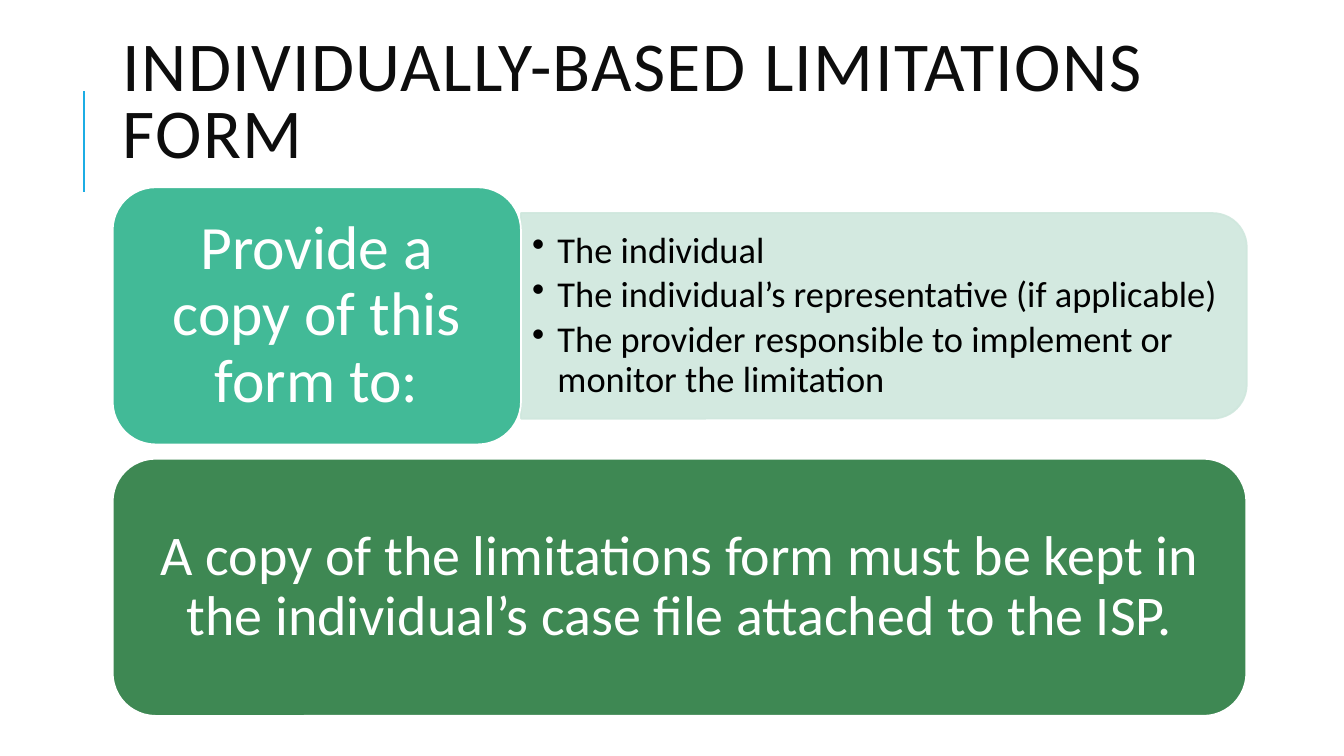
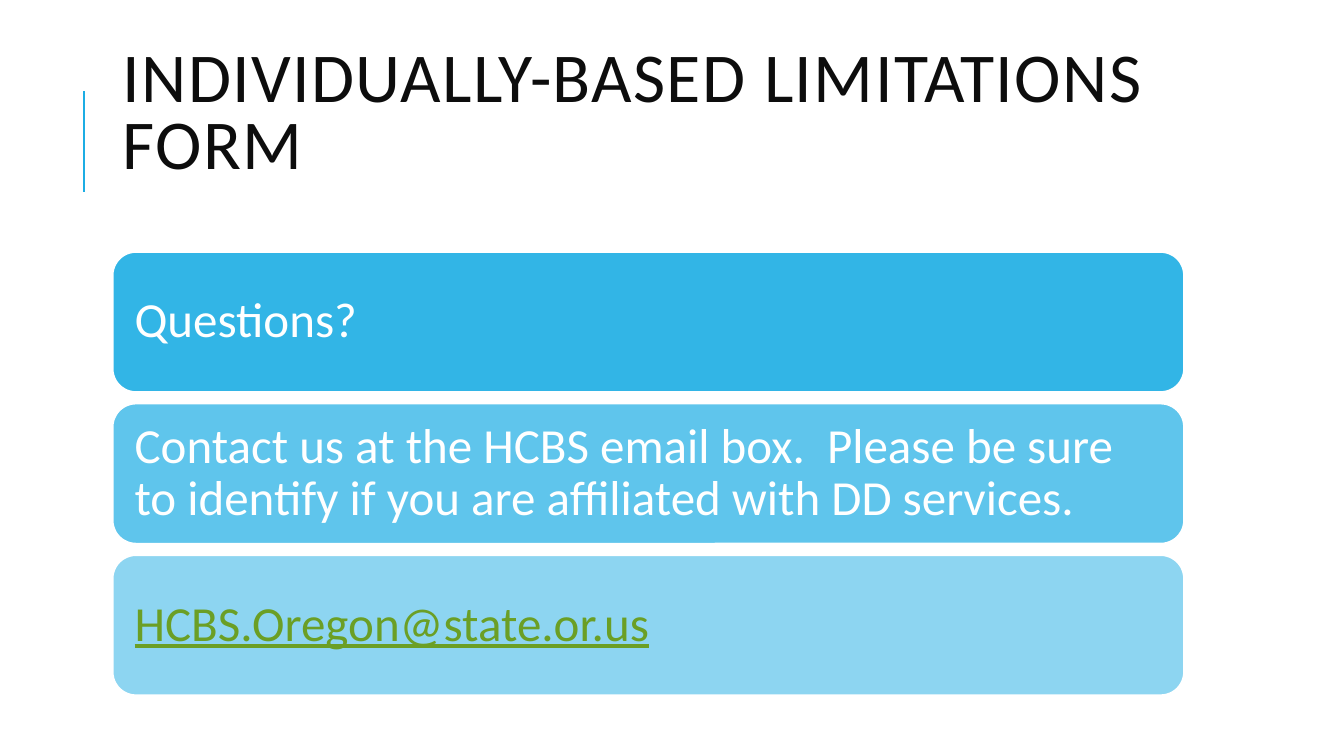
from lxml.etree import SubElement
from pptx import Presentation
from pptx.dml.color import RGBColor
from pptx.enum.shapes import MSO_CONNECTOR, MSO_SHAPE
from pptx.enum.text import MSO_ANCHOR, PP_ALIGN
from pptx.oxml.ns import qn
from pptx.util import Cm, Pt

COLORS = {
    "ink": "0D0D0D", "black": "000000", "white": "FFFFFF", "blue": "1CADE4",
    "teal": "42BA97", "mint": "CFE7DD", "green": "3E8853", "link": "6B9F25",
}
FONT = "Calibri"
TITLE = "INDIVIDUALLY-BASED LIMITATIONS FORM"

PROVIDE = "Provide a copy of this form to:"
RECIPIENTS = [
    "The individual",
    "The individual’s representative (if applicable)",
    "The provider responsible to implement or monitor the limitation",
]
KEEP = "A copy of the limitations form must be kept in the individual’s case file attached to the ISP."

# text, fill opacity in percent, text format
CONTACT = [
    ("Questions?", 90, {}),
    ("Contact us at the HCBS email box.  Please be sure to identify if you are "
     "affiliated with DD services.", 70, {}),
    ("HCBS.Oregon@state.or.us", 50, {"color": "link", "underline": True}),
]

# lengths in centimetres
LEFT, TITLE_WIDTH, TITLE_HEIGHT = 2.84, 27, 4.17
RULE_X, RULE_TOP, RULE_BOTTOM = 2.11, 2.29, 4.83
ROW_TOP, ROW_HEIGHT, ROW_GAP = 4.72, 6.48, 0.36
LABEL_WIDTH, KEEP_WIDTH = 10.29, 28.57
PANEL_WIDTH, PANEL_HEIGHT = 18.29, 5.18
LIST_WIDTH, LIST_HEIGHT = 18.03, 4.67
CARD_TOP, CARD_HEIGHT, CARD_GAP = 6.35, 3.53, 0.29


def rgb(name):
    return RGBColor.from_string(COLORS[name])


def set_text(shape, lines, size, color="white", align=PP_ALIGN.LEFT, spacing=0.9,
             inset=(0.25, 0.13), bullets=False, underline=None, tracking=None):
    tf = shape.text_frame
    tf.word_wrap = True
    tf.vertical_anchor = MSO_ANCHOR.MIDDLE
    tf.margin_left = tf.margin_right = Cm(inset[0])
    tf.margin_top = tf.margin_bottom = Cm(inset[1])
    for i, line in enumerate(lines):
        p = tf.add_paragraph() if i else tf.paragraphs[0]
        p.alignment = align
        p.line_spacing = spacing
        if bullets:
            p.space_after = Pt(4)
            pPr = p._p.get_or_add_pPr()
            pPr.set("marL", str(Cm(0.64)))
            pPr.set("indent", str(-Cm(0.64)))
            SubElement(pPr, qn("a:buChar"), char="•")
        r = p.add_run()
        r.text = line
        r.font.name = FONT
        r.font.size = Pt(size)
        r.font.color.rgb = rgb(color)
        r.font.underline = underline
        if tracking:
            r._r.get_or_add_rPr().set("spc", str(tracking * 100))


def add_text(s, x, y, w, h, lines, size, **fmt):
    set_text(s.shapes.add_textbox(Cm(x), Cm(y), Cm(w), Cm(h)), lines, size, **fmt)


def set_opacity(fill, percent):
    """Make a solid fill partly transparent."""
    color = fill._xPr.find(qn("a:solidFill"))[0]
    SubElement(color, qn("a:alpha"), val=str(percent * 1000))


def add_block(s, x, y, w, h, fill, line="white", kind=MSO_SHAPE.ROUNDED_RECTANGLE, opacity=100):
    sp = s.shapes.add_shape(kind, Cm(x), Cm(y), Cm(w), Cm(h))
    sp.shadow.inherit = False
    sp.fill.solid()
    sp.fill.fore_color.rgb = rgb(fill)
    sp.line.color.rgb = rgb(line)
    sp.line.width = Pt(1.25)
    if opacity < 100:
        set_opacity(sp.fill, opacity)
    return sp


def add_titled_slide(prs, title_top):
    s = prs.slides.add_slide(prs.slide_layouts[6])
    rule = s.shapes.add_connector(MSO_CONNECTOR.STRAIGHT, Cm(RULE_X), Cm(RULE_BOTTOM),
                                  Cm(RULE_X), Cm(RULE_TOP))
    rule.line.color.rgb = rgb("blue")
    rule.line.width = Pt(1.5)
    SubElement(rule._element.spPr, qn("a:effectLst"))
    add_text(s, LEFT, title_top, TITLE_WIDTH, TITLE_HEIGHT, [TITLE], 50,
             color="ink", spacing=0.8, tracking=1)
    return s


def add_copies_slide(prs):
    s = add_titled_slide(prs, 0.56)
    panel_left = LEFT + LABEL_WIDTH
    middle = ROW_TOP + ROW_HEIGHT / 2

    # The panel is a quarter turn: its drawn width is its height before turning.
    panel = add_block(s, panel_left + (PANEL_WIDTH - PANEL_HEIGHT) / 2, middle - PANEL_WIDTH / 2,
                      PANEL_HEIGHT, PANEL_WIDTH, "mint", line="mint",
                      kind=MSO_SHAPE.ROUND_2_SAME_RECTANGLE, opacity=90)
    panel.rotation = 90
    set_opacity(panel.line.fill, 90)
    add_text(s, panel_left, middle - LIST_HEIGHT / 2, LIST_WIDTH, LIST_HEIGHT, RECIPIENTS, 26,
             color="black", inset=(0.28, 0.13), bullets=True)

    label = add_block(s, LEFT, ROW_TOP, LABEL_WIDTH, ROW_HEIGHT, "teal")
    set_text(label, [PROVIDE], 44, align=PP_ALIGN.CENTER, inset=(0.46, 0.23))
    keep = add_block(s, LEFT, ROW_TOP + ROW_HEIGHT + ROW_GAP, KEEP_WIDTH, ROW_HEIGHT, "green")
    set_text(keep, [KEEP], 40, align=PP_ALIGN.CENTER, inset=(0.43, 0.2))


def add_contact_slide(prs):
    s = add_titled_slide(prs, 0.84)
    for i, (text, opacity, fmt) in enumerate(CONTACT):
        card = add_block(s, LEFT, CARD_TOP + i * (CARD_HEIGHT + CARD_GAP),
                         TITLE_WIDTH, CARD_HEIGHT, "blue", opacity=opacity)
        set_text(card, [text], 35, inset=(0.38, 0.38), **fmt)


def main():
    prs = Presentation()
    prs.slide_width, prs.slide_height = Cm(33.87), Cm(19.05)
    add_copies_slide(prs)
    add_contact_slide(prs)
    prs.save("out.pptx")


if __name__ == "__main__":
    main()
